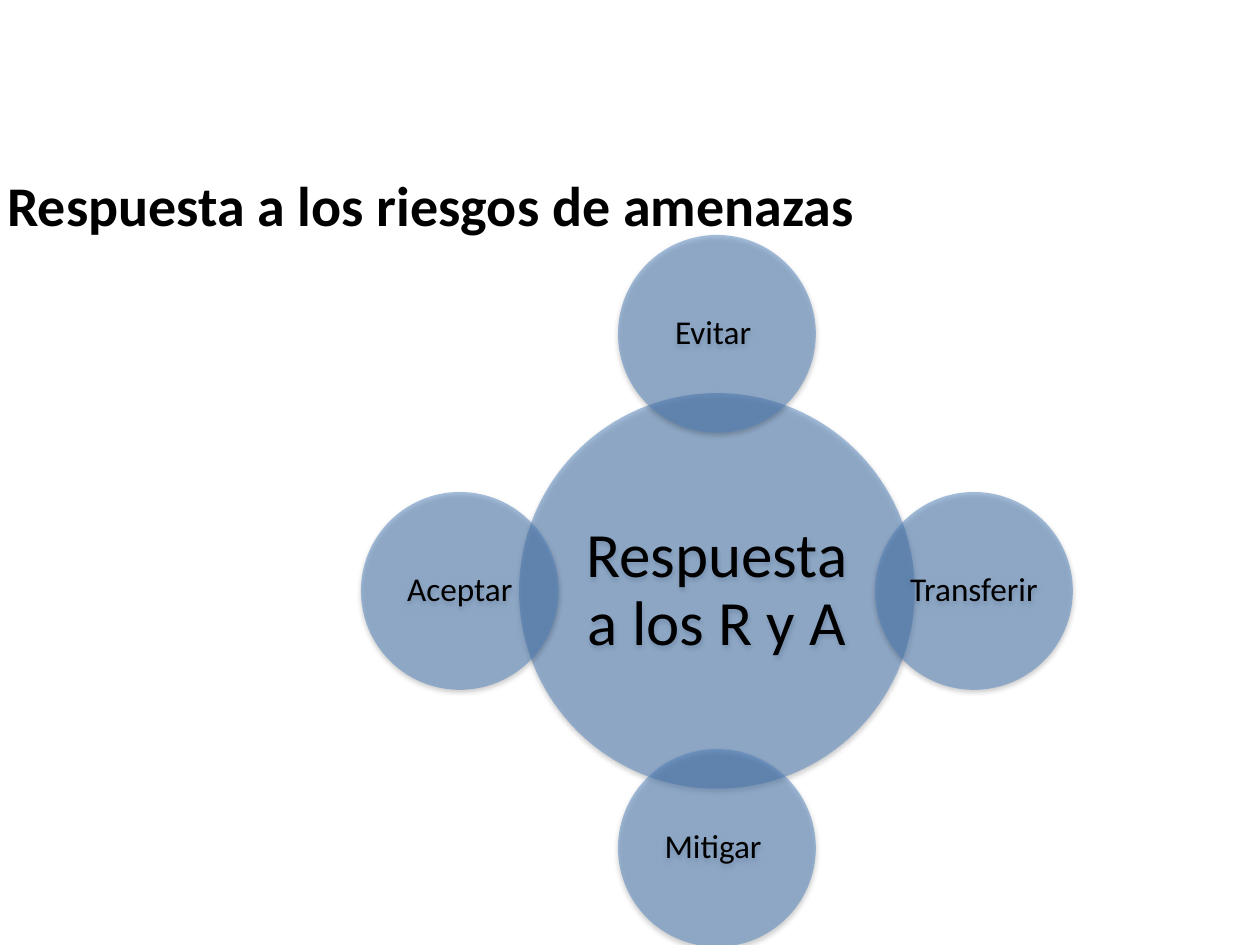
from math import cos, radians, sin
from typing import NamedTuple

from lxml.etree import SubElement
from pptx import Presentation
from pptx.dml.color import RGBColor
from pptx.enum.shapes import MSO_SHAPE
from pptx.enum.text import MSO_ANCHOR, PP_ALIGN
from pptx.oxml.ns import qn
from pptx.shapes.autoshape import Shape
from pptx.shapes.shapetree import GroupShapes
from pptx.text.text import Font
from pptx.util import Inches, Pt

CENTER_X, CENTER_Y = 5.69, 4.69
ORBIT = 2.04
BLUE, BLACK = "4F81BD", "000000"


class Circle(NamedTuple):
    label: str
    x: float
    y: float
    diameter: float
    size: int
    inset: float


def color(value: str) -> RGBColor:
    return RGBColor.from_string(value)


def set_font(font: Font, size: int, bold: bool = False) -> None:
    font.name = "Calibri"
    font.size = Pt(size)
    font.bold = bold
    font.color.rgb = color(BLACK)


def add_glass_effect(shape: Shape) -> None:
    """Make the solid fill half transparent and drop a soft shadow below."""
    properties = shape._element.spPr
    fill_color = properties.find(f"{qn('a:solidFill')}/{qn('a:srgbClr')}")
    SubElement(fill_color, qn("a:alpha"), val="50000")
    shadow = SubElement(
        properties.find(qn("a:effectLst")), qn("a:outerShdw"),
        blurRad=str(Pt(3.1)), dist=str(Pt(1.6)), dir="5400000", rotWithShape="0",
    )
    shadow_color = SubElement(shadow, qn("a:srgbClr"), val=BLACK)
    SubElement(shadow_color, qn("a:alpha"), val="38000")


def draw_circle(shapes: GroupShapes, circle: Circle) -> None:
    radius = circle.diameter / 2
    shape = shapes.add_shape(
        MSO_SHAPE.OVAL, Inches(circle.x - radius), Inches(circle.y - radius),
        Inches(circle.diameter), Inches(circle.diameter),
    )
    shape.shadow.inherit = False
    shape.fill.solid()
    shape.fill.fore_color.rgb = color(BLUE)
    shape.line.fill.background()
    add_glass_effect(shape)
    frame = shape.text_frame
    frame.word_wrap = True
    frame.vertical_anchor = MSO_ANCHOR.MIDDLE
    frame.margin_left = frame.margin_right = Inches(circle.inset)
    frame.margin_top = frame.margin_bottom = Inches(circle.inset)
    para = frame.paragraphs[0]
    para.text = circle.label
    para.alignment = PP_ALIGN.CENTER
    para.line_spacing = 0.9
    set_font(para.font, circle.size)


def main() -> None:
    deck = Presentation()
    deck.slide_width, deck.slide_height = Inches(10), Inches(7.5)
    page = deck.slides.add_slide(deck.slide_layouts[6])

    title = page.shapes.add_textbox(Inches(-0.04), Inches(1.07), Inches(9), Inches(1.1))
    title.text_frame.word_wrap = True
    title.text_frame.vertical_anchor = MSO_ANCHOR.MIDDLE
    para = title.text_frame.paragraphs[0]
    para.text = "Respuesta a los riesgos de amenazas"
    set_font(para.font, 32, bold=True)

    diagram = page.shapes.add_group_shape().shapes
    draw_circle(diagram, Circle("Respuesta a los R y A", CENTER_X, CENTER_Y, 3.14, 36, 0.05))
    for index, label in enumerate(("Evitar ", "Transferir", "Mitigar ", "Aceptar")):
        angle = radians(90 * index - 90)
        x, y = CENTER_X + ORBIT * cos(angle), CENTER_Y + ORBIT * sin(angle)
        draw_circle(diagram, Circle(label, x, y, 1.57, 19, 0.03))

    deck.save("out.pptx")


if __name__ == "__main__":
    main()
